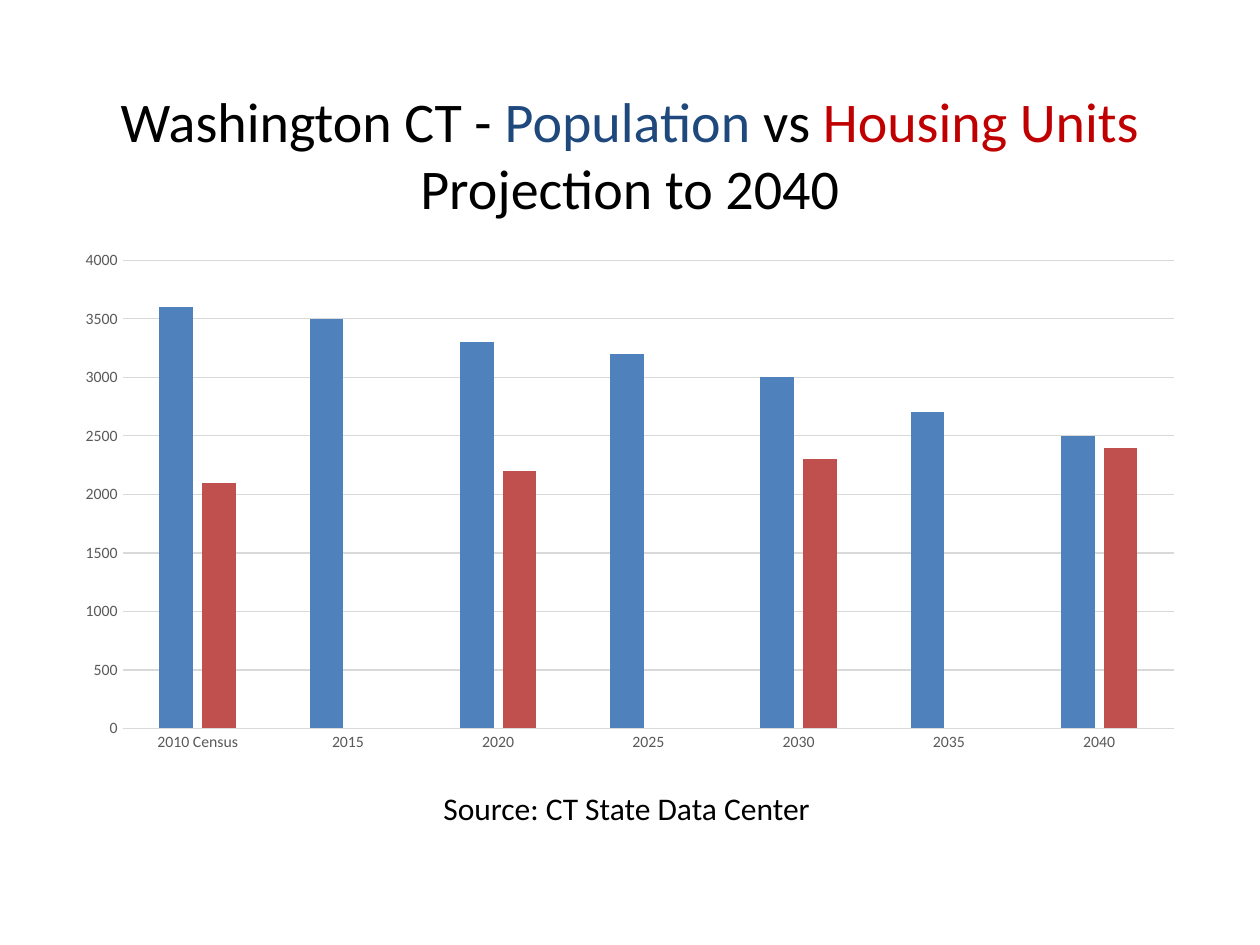
from pptx import Presentation
from pptx.chart.data import CategoryChartData
from pptx.dml.color import RGBColor
from pptx.enum.chart import XL_CHART_TYPE, XL_TICK_MARK
from pptx.enum.text import MSO_ANCHOR, PP_ALIGN
from pptx.util import Inches, Pt

FONT = "Calibri"
COLORS = {
    "text": "000000",
    "population_title": "1F497D",
    "housing_title": "C00000",
    "population_bar": "4F81BD",
    "housing_bar": "C0504D",
    "axis_text": "595959",
    "grid": "D9D9D9",
}


def format_font(font, size, color):
    values = {"name": FONT, "size": Pt(size)}
    for attribute, value in values.items():
        setattr(font, attribute, value)
    font.color.rgb = RGBColor.from_string(COLORS[color])


presentation = Presentation()
presentation.slide_width = Inches(10)
presentation.slide_height = Inches(7.5)
slide = presentation.slides.add_slide(presentation.slide_layouts[6])

# Title
title = slide.shapes.add_textbox(
    Inches(0.5), Inches(0.3), Inches(9), Inches(1.84)
).text_frame
title.word_wrap = True
title.vertical_anchor = MSO_ANCHOR.MIDDLE
heading = title.paragraphs[0]
heading.alignment = PP_ALIGN.CENTER
title_parts = [
    ("Washington CT - ", "text"),
    ("Population", "population_title"),
    (" vs ", "text"),
    ("Housing Units", "housing_title"),
    ("Projection to 2040", "text"),
]
for words, color in title_parts:
    if words.startswith("Projection"):
        heading.add_line_break()
    part = heading.add_run()
    part.text = words
    format_font(part.font, 32, color)

# Population and housing chart
projection = CategoryChartData()
projection.categories = ["2010 Census", "2015", "2020", "2025", "2030", "2035", "2040"]
projection.add_series("Series 1", [3600, 3500, 3300, 3200, 3000, 2700, 2500])
projection.add_series("Series 2", [2100, None, 2200, None, 2300, None, 2400])
chart = slide.shapes.add_chart(
    XL_CHART_TYPE.COLUMN_CLUSTERED,
    Inches(0.5), Inches(1.91), Inches(9), Inches(4.14), projection,
).chart
chart.has_title = False
chart.has_legend = False
format_font(chart.font, 10, "text")

bars = chart.plots[0]
for attribute, value in {"gap_width": 219, "overlap": -27, "vary_by_categories": False}.items():
    setattr(bars, attribute, value)
for series, color in zip(bars.series, ["population_bar", "housing_bar"]):
    series.invert_if_negative = False
    series.format.fill.solid()
    series.format.fill.fore_color.rgb = RGBColor.from_string(COLORS[color])

years, counts = chart.category_axis, chart.value_axis
for axis in (years, counts):
    axis.major_tick_mark = axis.minor_tick_mark = XL_TICK_MARK.NONE
    format_font(axis.tick_labels.font, 9, "axis_text")
for attribute, value in {"minimum_scale": 0, "maximum_scale": 4000, "major_unit": 500}.items():
    setattr(counts, attribute, value)
counts.has_major_gridlines = True
counts.format.line.fill.background()
for line in (years.format.line, counts.major_gridlines.format.line):
    line.color.rgb = RGBColor.from_string(COLORS["grid"])
    line.width = Pt(0.75)

# Source note
source_note = slide.shapes.add_textbox(
    Inches(3.42), Inches(6.21), Inches(3.22), Inches(0.4)
).text_frame
source_note.word_wrap = False
credit = source_note.paragraphs[0].add_run()
credit.text = "Source: CT State Data Center"
format_font(credit.font, 18, "text")

presentation.save("out.pptx")
